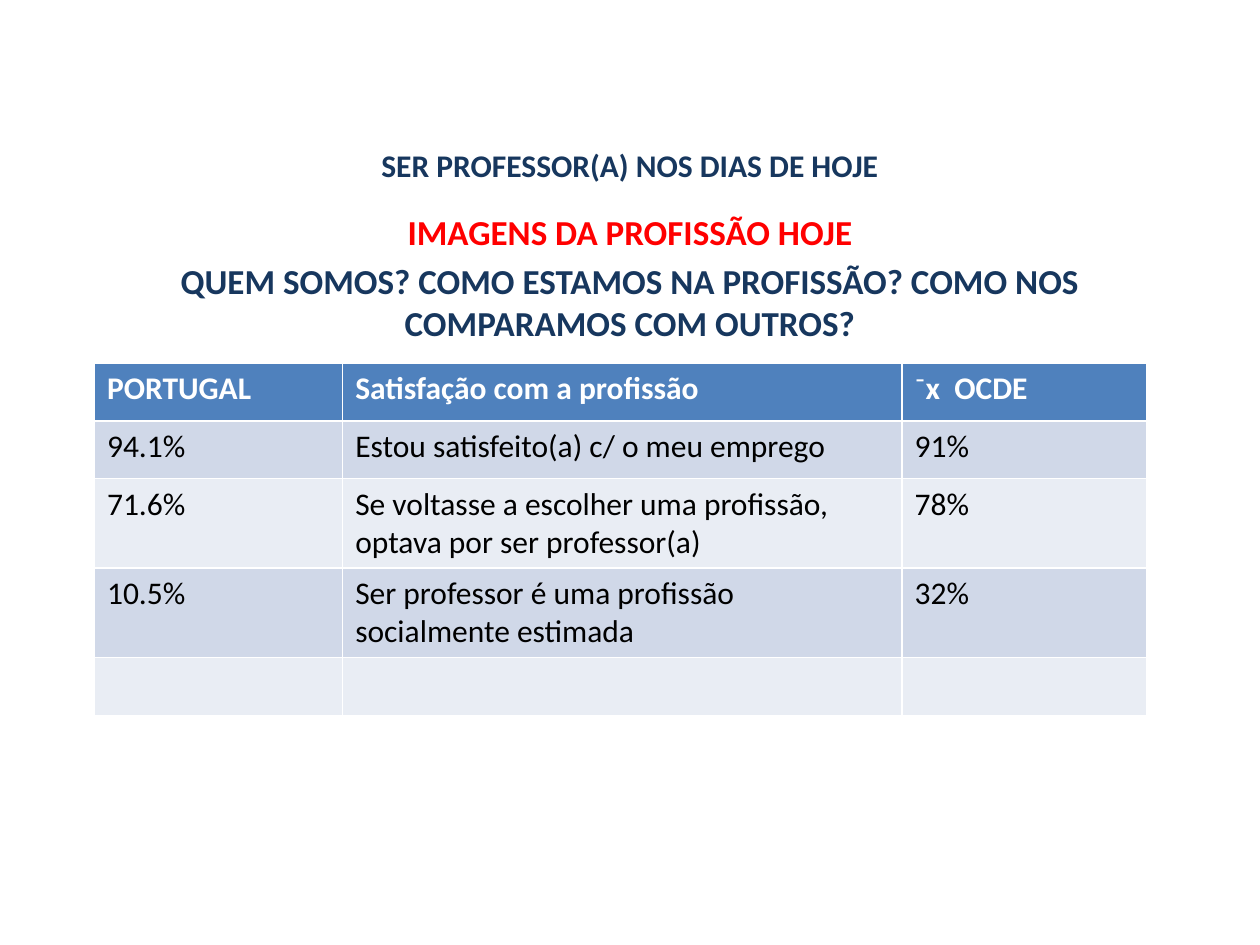
import pptx
import pptx.dml.color
import pptx.enum.text
import pptx.util
from dataclasses import dataclass

Inches = pptx.util.Inches
Pt = pptx.util.Pt
Color = pptx.dml.color.RGBColor.from_string
CENTER = pptx.enum.text.PP_ALIGN.CENTER


@dataclass(frozen=True)
class Theme:
    font: str = "Calibri"
    navy: str = "17375E"
    red: str = "FF0000"
    white: str = "FFFFFF"
    black: str = "000000"
    header_fill: str = "4F81BD"
    band_fills: tuple = ("D0D8E8", "E9EDF4")
    body_size: int = 18
    subtitle_size: int = 20


theme = Theme()


def set_font(para, size, color, bold):
    para.font.name = theme.font
    para.font.size = Pt(size)
    para.font.bold = bold
    para.font.color.rgb = Color(color)


deck = pptx.Presentation()
deck.slide_width = Inches(10)
deck.slide_height = Inches(7.5)
page = deck.slides.add_slide(deck.slide_layouts[5])

# Title
title = page.shapes.title
title.left, title.top = Inches(0.75), Inches(0.84)
title.width, title.height = Inches(8.5), Inches(0.94)
title.text_frame.text = "SER PROFESSOR(A) NOS DIAS DE HOJE"
title.text_frame.vertical_anchor = pptx.enum.text.MSO_ANCHOR.MIDDLE
title_para = title.text_frame.paragraphs[0]
title_para.alignment = CENTER
set_font(title_para, theme.body_size, theme.navy, True)

# Subtitle
subtitle_lines = [
    ("IMAGENS DA PROFISSÃO HOJE", theme.red),
    ("QUEM SOMOS? COMO ESTAMOS NA PROFISSÃO? COMO NOS COMPARAMOS COM OUTROS?",
     theme.navy),
]
subtitle = page.shapes.add_textbox(Inches(1.22), Inches(1.62), Inches(7.56), Inches(1.2))
frame = subtitle.text_frame
frame.word_wrap = True
frame.text = "\n".join(line for line, color in subtitle_lines)
for para, (line, color) in zip(frame.paragraphs, subtitle_lines):
    para.alignment = CENTER
    para.space_before = Pt(4)
    set_font(para, theme.subtitle_size, color, True)

# Satisfaction table
rows = [
    ("PORTUGAL", "Satisfação com a profissão", "⁻x  OCDE"),
    ("94.1%", "Estou satisfeito(a) c/ o meu emprego", "91%"),
    ("71.6%", "Se voltasse a escolher uma profissão, optava por ser professor(a)", "78%"),
    ("10.5%", "Ser professor é uma profissão socialmente estimada", "32%"),
    ("", "", ""),
]
column_widths = [1.97, 4.44, 1.94]
row_heights = [0.46, 0.46, 0.71, 0.71, 0.46]
table = page.shapes.add_table(
    len(rows), len(column_widths), Inches(0.75), Inches(2.88),
    Inches(sum(column_widths)), Inches(sum(row_heights))).table
for column, width in zip(table.columns, column_widths):
    column.width = Inches(width)
for row_index, (texts, height) in enumerate(zip(rows, row_heights)):
    is_header = row_index == 0
    fill = theme.header_fill if is_header else theme.band_fills[(row_index - 1) % 2]
    table.rows[row_index].height = Inches(height)
    for column_index, text in enumerate(texts):
        cell = table.cell(row_index, column_index)
        cell.text = text
        cell.fill.solid()
        cell.fill.fore_color.rgb = Color(fill)
        set_font(cell.text_frame.paragraphs[0], theme.body_size,
                 theme.white if is_header else theme.black, is_header)

deck.save("out.pptx")
